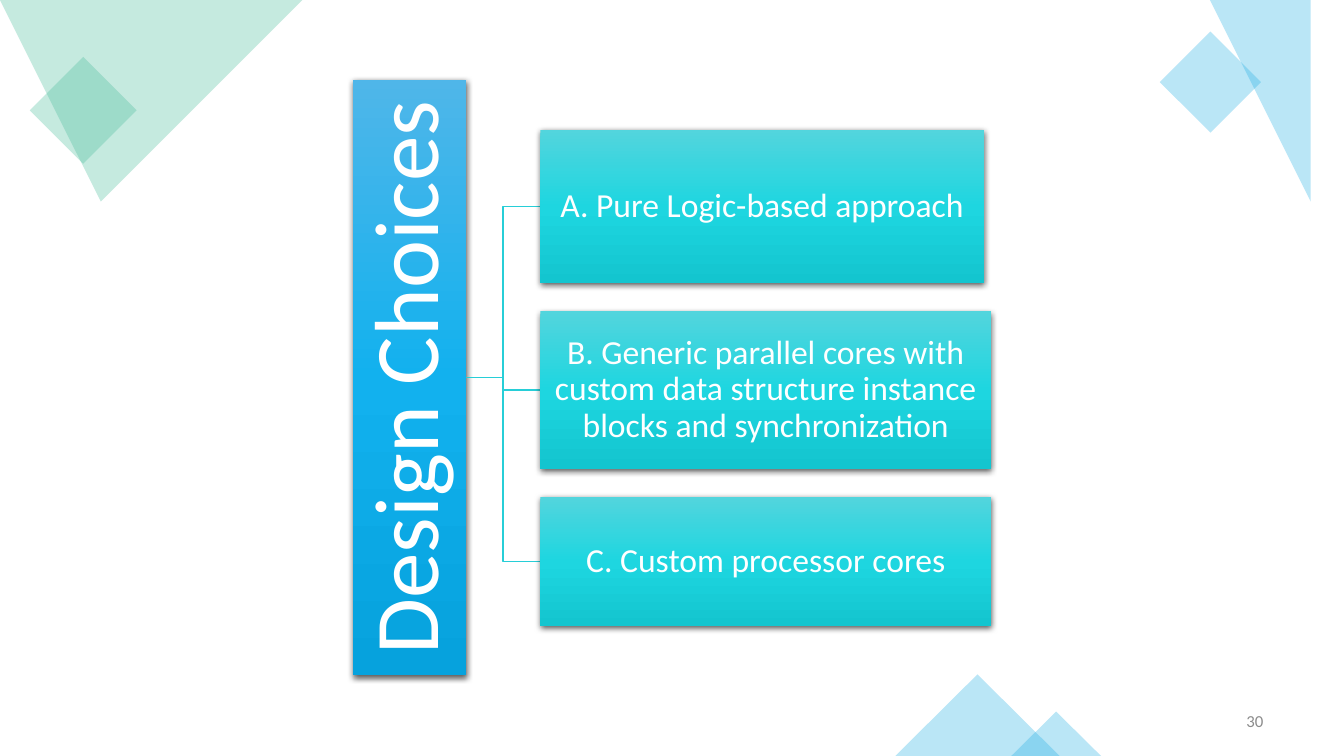
from lxml.etree import SubElement
from pptx import Presentation
from pptx.dml.color import RGBColor
from pptx.enum.shapes import MSO_CONNECTOR as Connector, MSO_SHAPE as Shape
from pptx.enum.text import MSO_ANCHOR as Anchor, PP_ALIGN as Align
from pptx.oxml import parse_xml
from pptx.oxml.ns import nsdecls, qn
from pptx.util import Inches, Pt

WHITE = RGBColor(0xFF, 0xFF, 0xFF)
GRAY = RGBColor(0x8C, 0x8C, 0x8C)
GREEN = RGBColor(0x42, 0xBA, 0x97)
BLUE = RGBColor(0x1C, 0xAD, 0xE4)
TURQUOISE = RGBColor(0x27, 0xCE, 0xD7)
BAR_SHADES = [RGBColor(0x4F, 0xB6, 0xE9), RGBColor(0x12, 0xB1, 0xEE), RGBColor(0x06, 0xA2, 0xDD)]
BOX_SHADES = [RGBColor(0x52, 0xD5, 0xDD), RGBColor(0x1E, 0xD6, 0xE0), RGBColor(0x13, 0xC5, 0xCF)]

CHOICES = [
    ("A. Pure Logic-based approach", 4.4, 1.52),
    ("B. Generic parallel cores with custom data structure instance "
     "blocks and synchronization", 4.47, 1.56),
    ("C. Custom processor cores", 4.47, 1.28),
]


def tint(shape, color):
    """Fill a decoration with a 30 % opaque colour and no outline."""
    shape.shadow.inherit = False
    shape.line.fill.background()
    shape.fill.solid()
    shape.fill.fore_color.rgb = color
    color_node = shape.fill._xPr.find(".//" + qn("a:srgbClr"))
    SubElement(color_node, qn("a:alpha"), val="30000")


def add_decoration(slide, kind, box, color, rotation=0):
    """Add a translucent preset shape."""
    shape = slide.shapes.add_shape(kind, *map(Inches, box))
    shape.rotation = rotation
    tint(shape, color)


def add_polygon(slide, points, color):
    """Add a translucent polygon through points given in inches."""
    builder = slide.shapes.build_freeform(*points[0], scale=Inches(1))
    builder.add_line_segments(points[1:], close=True)
    tint(builder.convert_to_shape(), color)


def add_corners(slide):
    """Decorate three corners of the slide."""
    add_decoration(slide, Shape.RECTANGLE, (0.45, 0.72, 0.75, 0.75), GREEN, 45)
    add_polygon(slide, [(0, 0), (3.1, 0), (1.4, 1.62), (0, 0.28)], GREEN)
    add_polygon(slide, [(11.81, 0), (13.33, 0), (13.33, 1.3), (12.92, 1.71), (11.5, 0.3)], BLUE)
    add_decoration(slide, Shape.RECTANGLE, (11.65, 0.46, 0.71, 0.71), BLUE, 45)
    add_decoration(slide, Shape.ISOSCELES_TRIANGLE, (8.88, 6.69, 1.63, 0.81), BLUE)
    add_decoration(slide, Shape.ISOSCELES_TRIANGLE, (10.03, 7.06, 0.89, 0.44), BLUE)


def add_panel(slide, box, text, size, shades, inset, rotation=0, angle=270):
    """Add a shaded, shadowed rectangle with centred white text."""
    shape = slide.shapes.add_shape(Shape.RECTANGLE, *map(Inches, box))
    shape.rotation = rotation
    shape.line.fill.background()
    shape.fill.gradient()
    shape.fill.gradient_angle = angle
    stops = shape.fill._xPr.find(".//" + qn("a:gsLst"))
    for stop in list(stops):
        stops.remove(stop)
    for position, shade in zip((0, 50000, 100000), shades):
        stop = SubElement(stops, qn("a:gs"), pos=str(position))
        SubElement(stop, qn("a:srgbClr"), val=str(shade))
    shape.shadow.inherit = False
    shape.fill._xPr.find(qn("a:effectLst")).append(parse_xml(
        f'<a:outerShdw {nsdecls("a")} blurRad="{Pt(4.5)}" dist="{Pt(1.5)}" dir="5400000" '
        'algn="ctr" rotWithShape="0"><a:srgbClr val="000000"><a:alpha val="63000"/>'
        '</a:srgbClr></a:outerShdw>'))
    frame = shape.text_frame
    frame.word_wrap = True
    frame.vertical_anchor = Anchor.MIDDLE
    frame.margin_left = frame.margin_right = Inches(inset)
    frame.margin_top = frame.margin_bottom = Inches(inset)
    paragraph = frame.paragraphs[0]
    paragraph.text = text
    paragraph.alignment = Align.CENTER
    paragraph.line_spacing = 0.9
    paragraph.font.name = "Calibri"
    paragraph.font.size = Pt(size)
    paragraph.font.color.rgb = WHITE


def add_branch(slide, start, end):
    """Link the bar to a choice with an elbow line."""
    line = slide.shapes.add_connector(Connector.ELBOW, *map(Inches, start + end))
    line.line.color.rgb = TURQUOISE
    line.line.width = Pt(1)
    SubElement(line._element.spPr, qn("a:effectLst"))


def add_choice_tree(slide, left, top, height):
    """Draw the upright bar and its branches to the stacked choices."""
    bar_width, link_width, gap = 1.12, 0.74, 0.28
    middle = top + height / 2
    bar_right = left + bar_width
    box_left = bar_right + link_width
    box_top = top + 0.5
    bar_box = (left + (bar_width - height) / 2, middle - bar_width / 2, height, bar_width)
    add_panel(slide, bar_box, "Design Choices", 65, BAR_SHADES, 0.05, rotation=270, angle=180)
    for text, width, box_height in CHOICES:
        add_branch(slide, (bar_right, middle), (box_left, box_top + box_height / 2))
        add_panel(slide, (box_left, box_top, width, box_height), text, 24, BOX_SHADES, 0.02)
        box_top += box_height + gap


def add_slide_number(slide, box, number):
    """Add the right-aligned slide number."""
    frame = slide.shapes.add_textbox(*map(Inches, box)).text_frame
    frame.word_wrap = True
    frame.vertical_anchor = Anchor.MIDDLE
    paragraph = frame.paragraphs[0]
    paragraph.text = number
    paragraph.alignment = Align.RIGHT
    paragraph.font.name = "Calibri"
    paragraph.font.size = Pt(12)
    paragraph.font.color.rgb = GRAY


def main():
    """Build and save the presentation."""
    presentation = Presentation()
    presentation.slide_width = Inches(13.33)
    presentation.slide_height = Inches(7.5)
    slide = presentation.slides.add_slide(presentation.slide_layouts[6])
    add_corners(slide)
    add_slide_number(slide, (9.63, 6.95, 3, 0.4), "30")
    add_choice_tree(slide, 3.5, 0.79, 5.91)
    presentation.save("out.pptx")


if __name__ == "__main__":
    main()
